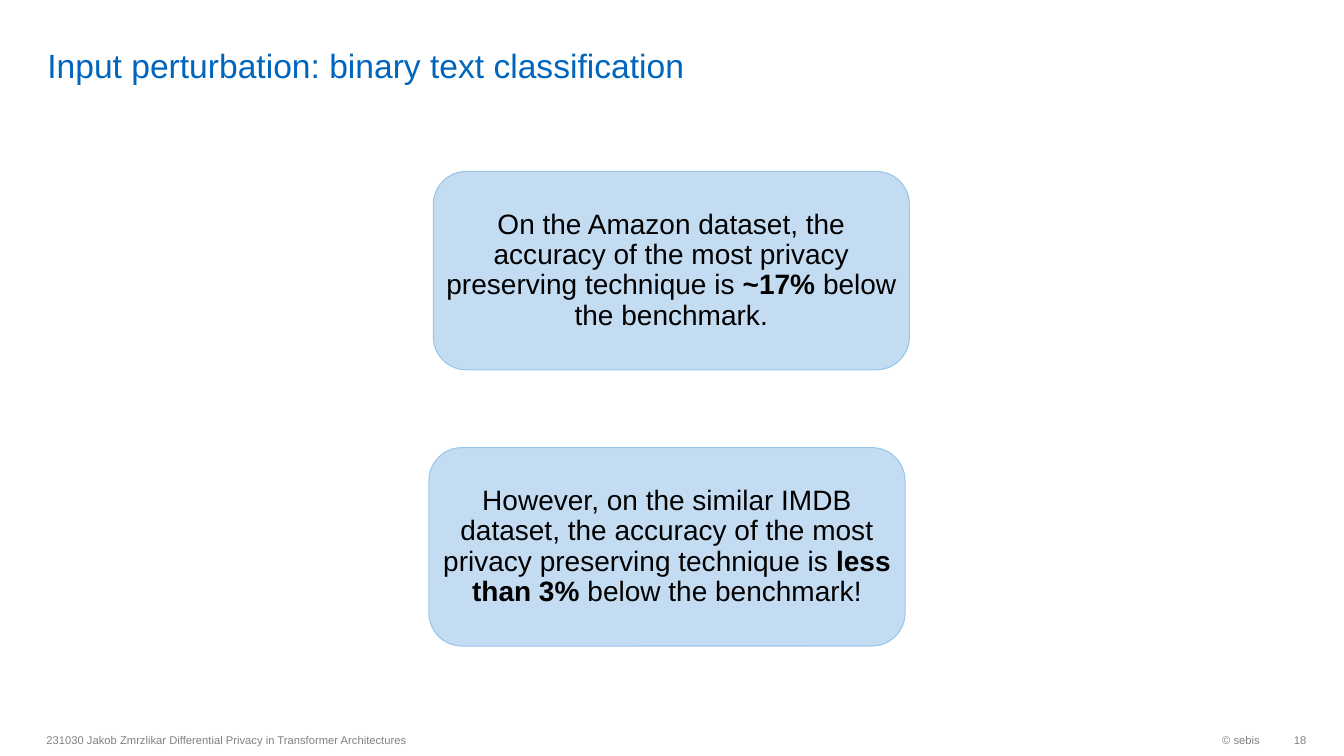
from pptx import Presentation
from pptx.dml.color import RGBColor
from pptx.enum.shapes import MSO_SHAPE
from pptx.enum.text import MSO_ANCHOR, PP_ALIGN
from pptx.util import Cm, Pt

COLORS = {
    "title": "0065BD",
    "card": "C4DCF2",
    "border": "98C6EA",
    "text": "000000",
    "footer": "808080",
}


class SlideBuilder:
    """Holds the style and the current slide."""

    font_name = "Arial"

    def __init__(self, slide):
        self.slide = slide

    def color(self, name):
        return RGBColor.from_string(COLORS[name])

    def add_run(self, paragraph, text, size, color, bold=False):
        run = paragraph.add_run()
        run.text = text
        run.font.name = self.font_name
        run.font.size = Pt(size)
        run.font.bold = bold
        run.font.color.rgb = self.color(color)

    def title(self, text, left, top, width, height):
        shape = self.slide.shapes.title
        shape.left, shape.top = Cm(left), Cm(top)
        shape.width, shape.height = Cm(width), Cm(height)
        frame = shape.text_frame
        frame.vertical_anchor = MSO_ANCHOR.BOTTOM
        frame.margin_top = frame.margin_bottom = 0
        paragraph = frame.paragraphs[0]
        paragraph.alignment = PP_ALIGN.LEFT
        self.add_run(paragraph, text, 24, "title")

    def card(self, left, top, parts):
        """Rounded box; parts are (text, bold) pairs."""
        shape = self.slide.shapes.add_shape(
            MSO_SHAPE.ROUNDED_RECTANGLE, Cm(left), Cm(top), Cm(12), Cm(5))
        shape.shadow.inherit = False
        shape.fill.solid()
        shape.fill.fore_color.rgb = self.color("card")
        shape.line.color.rgb = self.color("border")
        shape.line.width = Pt(0.75)
        frame = shape.text_frame
        frame.word_wrap = True
        frame.vertical_anchor = MSO_ANCHOR.MIDDLE
        frame.margin_left = frame.margin_right = Cm(0.08)
        paragraph = frame.paragraphs[0]
        paragraph.alignment = PP_ALIGN.CENTER
        paragraph.line_spacing = 0.9
        for text, bold in parts:
            self.add_run(paragraph, text, 20, "text", bold)

    def footer(self, text, left, width, alignment, margin_right=0.25):
        box = self.slide.shapes.add_textbox(
            Cm(left), Cm(18.25), Cm(width), Cm(0.81))
        frame = box.text_frame
        frame.word_wrap = True
        frame.vertical_anchor = MSO_ANCHOR.MIDDLE
        frame.margin_right = Cm(margin_right)
        paragraph = frame.paragraphs[0]
        paragraph.alignment = alignment
        self.add_run(paragraph, text, 8, "footer")


def main():
    presentation = Presentation()
    presentation.slide_width = Cm(33.87)
    presentation.slide_height = Cm(19.05)
    title_only = presentation.slide_layouts[5]
    builder = SlideBuilder(presentation.slides.add_slide(title_only))

    # Title
    builder.title("Input perturbation: binary text classification",
                  0.94, 0.13, 29.41, 2.01)

    # Findings
    builder.card(10.92, 4.32, [
        ("On the Amazon dataset, the accuracy of the most privacy "
         "preserving technique is ", False),
        ("~17% ", True),
        ("below the benchmark.", False),
    ])
    builder.card(10.81, 11.28, [
        ("However, on the similar IMDB dataset, the accuracy of the most "
         "privacy preserving technique is ", False),
        ("less than 3% ", True),
        ("below the benchmark!", False),
    ])

    # Footer
    builder.footer("231030 Jakob Zmrzlikar Differential Privacy in "
                   "Transformer Architectures", 0.92, 16, PP_ALIGN.LEFT)
    builder.footer("© sebis", 26.06, 5.94, PP_ALIGN.RIGHT)
    builder.footer("18", 32, 0.92, PP_ALIGN.RIGHT, margin_right=0)

    presentation.save("out.pptx")


if __name__ == "__main__":
    main()
